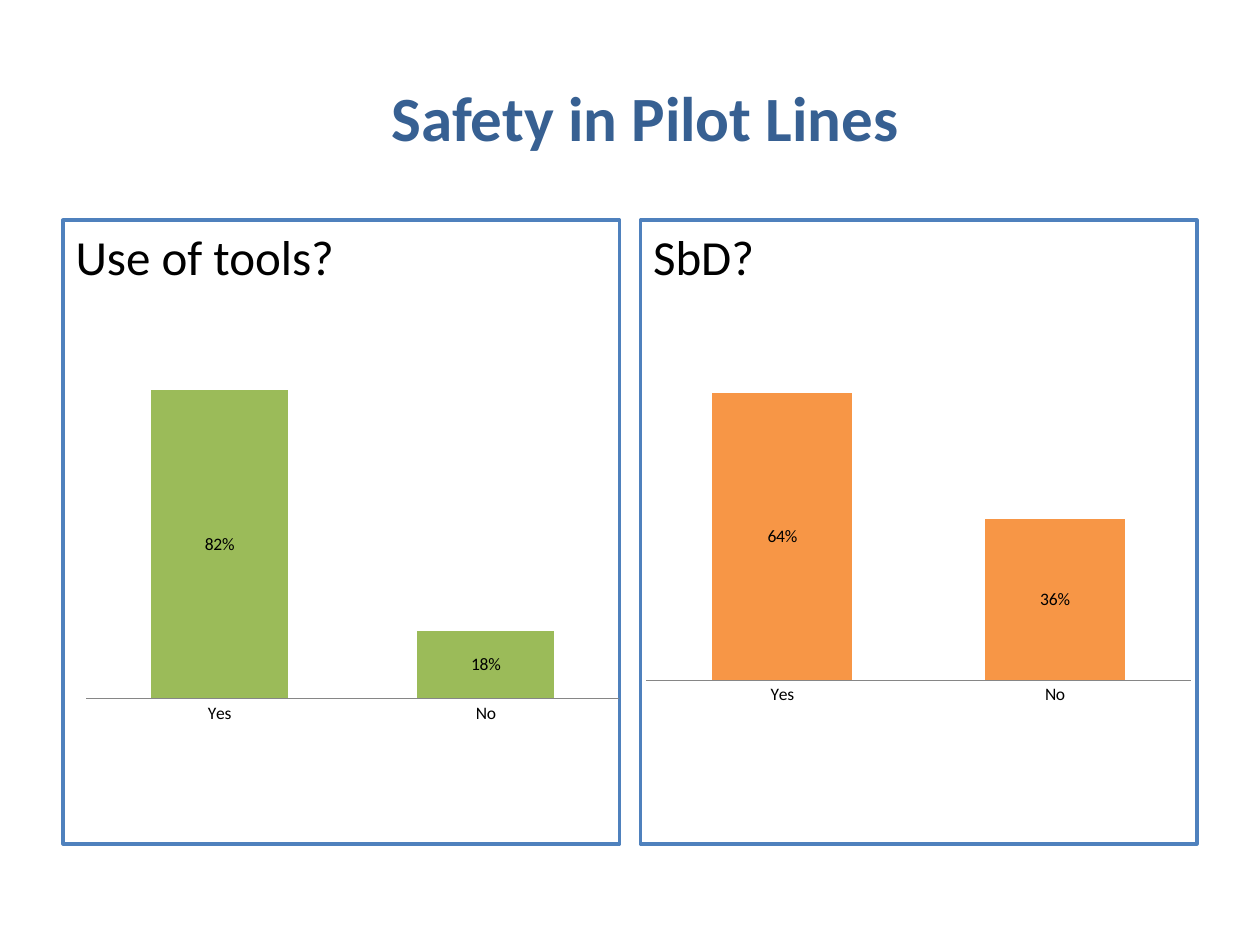
from dataclasses import dataclass

from lxml import etree
from pptx import Presentation
from pptx.chart.data import CategoryChartData
from pptx.dml.color import RGBColor
from pptx.enum.chart import XL_CHART_TYPE, XL_TICK_MARK
from pptx.enum.text import MSO_ANCHOR, PP_ALIGN
from pptx.oxml import parse_xml
from pptx.oxml.ns import nsdecls, qn
from pptx.util import Cm, Pt

STACKED = XL_CHART_TYPE.COLUMN_STACKED
NO_TICK = XL_TICK_MARK.NONE
CENTER, MIDDLE, TOP = PP_ALIGN.CENTER, MSO_ANCHOR.MIDDLE, MSO_ANCHOR.TOP

FONT = "Calibri"
WHITE = RGBColor(0xFF, 0xFF, 0xFF)
BLACK = RGBColor(0x00, 0x00, 0x00)
TITLE_BLUE = RGBColor(0x37, 0x60, 0x92)
FRAME_BLUE = RGBColor(0x4F, 0x81, 0xBD)
AXIS_GRAY = RGBColor(0x86, 0x86, 0x86)
GREEN = RGBColor(0x9B, 0xBB, 0x59)
ORANGE = RGBColor(0xF7, 0x96, 0x46)

Box = tuple[float, float, float, float]  # left, top, width, height in cm

PANEL_LEFT, PANEL_TOP, PANEL_W, PANEL_H = 1.27, 4.44, 11.22, 12.57
PANEL_STEP = 11.64


@dataclass
class Panel:
    question: str
    box: Box
    values: tuple[float, float]
    top_value: float
    color: RGBColor
    plot: Box | None = None  # inner plot area as shares of the chart


PANELS = [
    Panel("Use of tools?", (1.52, 7.11, 11.18, 7.62), (0.82, 0.18), 0.9, GREEN),
    Panel("SbD?", (12.32, 7.01, 11.71, 7.62), (0.64, 0.36), 0.7, ORANGE,
          (0.06, 0.05, 0.94, 0.83)),
]


def place(shape, box: Box) -> None:
    shape.left, shape.top, shape.width, shape.height = map(Cm, box)


def style(font, size: float, color: RGBColor, bold: bool = False) -> None:
    font.name, font.size, font.bold = FONT, Pt(size), bold
    font.color.rgb = color


def fill_title(sp, text: str) -> None:
    place(sp, (5.11, 0.76, 15.8, 3.18))
    tf = sp.text_frame
    tf.text = text
    tf.vertical_anchor = MIDDLE
    p = tf.paragraphs[0]
    p.alignment = CENTER
    style(p.runs[0].font, 36, TITLE_BLUE, bold=True)


def fill_panel(sp, text: str, column: int) -> None:
    place(sp, (PANEL_LEFT + column * PANEL_STEP, PANEL_TOP, PANEL_W, PANEL_H))
    sp.fill.solid()
    sp.fill.fore_color.rgb = WHITE
    sp.line.color.rgb = FRAME_BLUE
    sp.line.width = Pt(2)
    tf = sp.text_frame
    tf.text = text
    tf.vertical_anchor = TOP
    p = tf.paragraphs[0]
    pPr = p._p.get_or_add_pPr()
    pPr.set("marL", str(Cm(0.95)))
    pPr.set("indent", str(-Cm(0.95)))
    etree.SubElement(pPr, qn("a:buNone"))
    p.space_before = Pt(0)
    style(p.runs[0].font, 28, BLACK)


def set_plot_area(chart, plot: Box) -> None:
    modes = "".join(f'<c:{m}Mode val="edge"/>' for m in "xy")
    sizes = "".join(f'<c:{n} val="{v}"/>' for n, v in zip("xywh", plot))
    layout = parse_xml(
        f'<c:layout {nsdecls("c")}><c:manualLayout>'
        f'<c:layoutTarget val="inner"/>{modes}{sizes}'
        f'</c:manualLayout></c:layout>')
    area = chart._chartSpace.chart.plotArea
    for old in area.findall(qn("c:layout")):
        area.remove(old)
    area.insert(0, layout)


def add_bars(s, panel: Panel) -> None:
    data = CategoryChartData(number_format="0%")
    data.categories = ["Yes", "No"]
    data.add_series("Series 1", panel.values)
    chart = s.shapes.add_chart(STACKED, *map(Cm, panel.box), data).chart
    chart.has_legend = chart.has_title = False
    style(chart.font, 10, BLACK)

    # Axes
    cat, val = chart.category_axis, chart.value_axis
    cat.major_tick_mark = NO_TICK
    cat.format.line.color.rgb = AXIS_GRAY
    val.visible = val.has_major_gridlines = False
    val.minimum_scale, val.maximum_scale = 0, panel.top_value

    # Bars and labels
    plot = chart.plots[0]
    plot.gap_width, plot.overlap = 95, 100
    plot.vary_by_categories = False
    series = plot.series[0]
    series.format.fill.solid()
    series.format.fill.fore_color.rgb = panel.color
    labels = series.data_labels
    labels.show_value = True
    labels.number_format, labels.number_format_is_linked = "0%", False
    style(labels.font, 10, BLACK)
    if panel.plot:
        set_plot_area(chart, panel.plot)


def main() -> None:
    prs = Presentation()
    prs.slide_width, prs.slide_height = Cm(25.4), Cm(19.05)
    s = prs.slides.add_slide(prs.slide_layouts[3])

    # Title and framed questions
    fill_title(s.shapes.title, "Safety in Pilot Lines")
    for column, panel in enumerate(PANELS):
        fill_panel(s.placeholders[column + 1], panel.question, column)

    # The left chart lies on top
    for panel in reversed(PANELS):
        add_bars(s, panel)

    prs.save("out.pptx")


if __name__ == "__main__":
    main()
